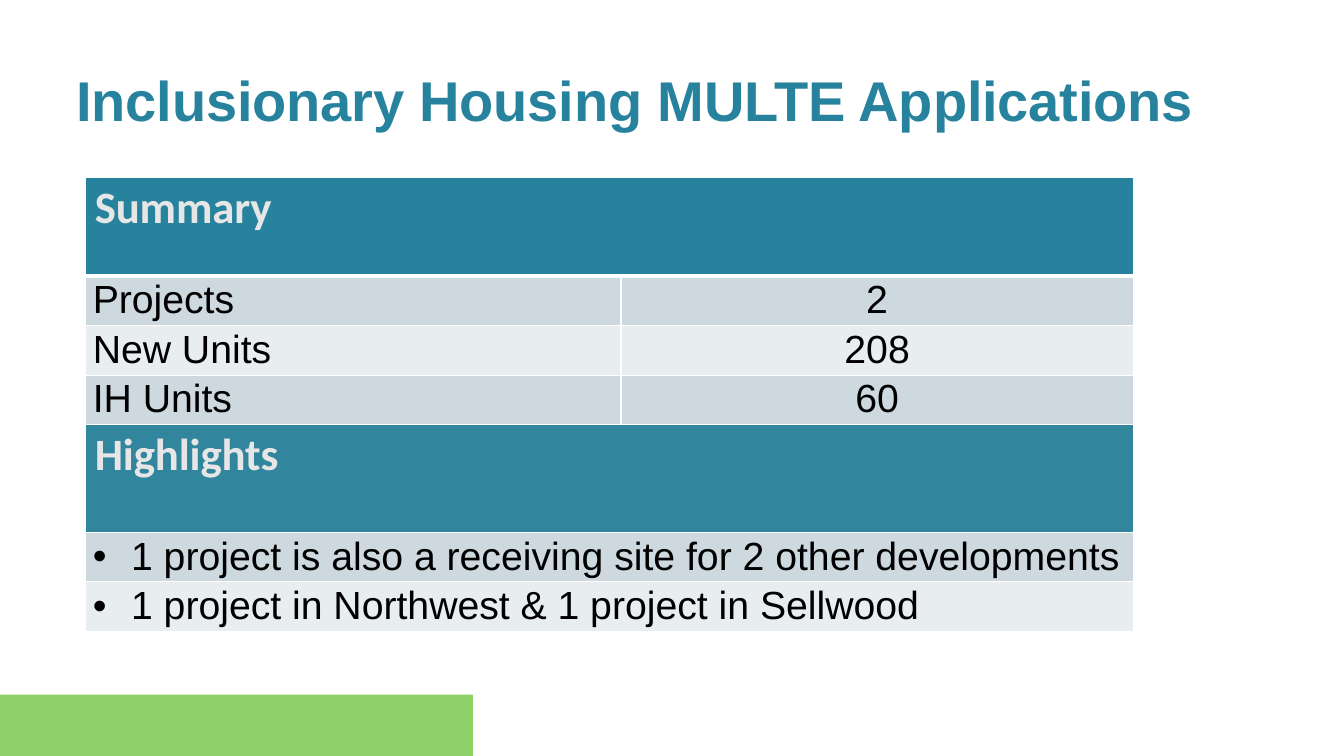
from dataclasses import dataclass

from lxml.etree import SubElement
from pptx import Presentation
from pptx.dml.color import RGBColor
from pptx.enum.shapes import MSO_SHAPE as Preset
from pptx.enum.text import MSO_ANCHOR as Anchor, MSO_AUTO_SIZE as AutoSize, PP_ALIGN as Align
from pptx.oxml.ns import qn
from pptx.util import Emu, Inches, Pt

TEAL = RGBColor(0x27, 0x82, 0x9D)
DEEP_TEAL = RGBColor(0x31, 0x85, 0x9C)
DARK_BAND = RGBColor(0xCD, 0xD8, 0xDF)
LIGHT_BAND = RGBColor(0xE8, 0xED, 0xF0)
PALE_GREY = RGBColor(0xE7, 0xE6, 0xE6)
GREEN = RGBColor(0x8F, 0xD1, 0x69)
WHITE = RGBColor(0xFF, 0xFF, 0xFF)
BLACK = RGBColor(0x00, 0x00, 0x00)

SLIDE_WIDTH, SLIDE_HEIGHT = Inches(13.33), Inches(7.5)


def across(percent: float) -> Emu:
    return Emu(round(SLIDE_WIDTH * percent / 100))


def down(percent: float) -> Emu:
    return Emu(round(SLIDE_HEIGHT * percent / 100))


COLUMNS = (across(39.83), across(38.11))
BODY_HEIGHT = down(6.27)


@dataclass(frozen=True)
class Row:
    label: str
    fill: RGBColor
    value: str = ""
    height: Emu = BODY_HEIGHT
    heading: bool = False
    bulleted: bool = False


ROWS = (
    Row("Summary", TEAL, height=down(13.07), heading=True),
    Row("Projects", DARK_BAND, "2"),
    Row("New Units", LIGHT_BAND, "208"),
    Row("IH Units", DARK_BAND, "60"),
    Row("Highlights", DEEP_TEAL, height=down(14.27), heading=True),
    Row("1 project is also a receiving site for 2 other developments", DARK_BAND, bulleted=True),
    Row("1 project in Northwest & 1 project in Sellwood", LIGHT_BAND, bulleted=True),
)


def set_font(para, name: str, size: float, color: RGBColor, bold: bool) -> None:
    font = para.font
    font.name, font.size, font.bold = name, Pt(size), bold
    font.color.rgb = color


def set_indent(para, left: float, first: float = 0) -> None:
    properties = para._p.get_or_add_pPr()
    properties.set("marL", str(Inches(left)))
    properties.set("indent", str(Inches(first)))


def tighten(para) -> None:
    for span in para.runs:
        span._r.get_or_add_rPr().set("spc", "-10")


def set_borders(cell, top: float, bottom: float) -> None:
    properties = cell._tc.get_or_add_tcPr()
    sides = (("L", 1), ("R", 1), ("T", top), ("B", bottom))
    for index, (side, width) in enumerate(sides):
        line = SubElement(properties, qn(f"a:ln{side}"), w=str(Pt(width)))
        fill = SubElement(line, qn("a:solidFill"))
        SubElement(fill, qn("a:srgbClr"), val=str(WHITE))
        properties.insert(index, line)


def write_cell(cell, text: str, row: Row, align: Align) -> None:
    side = 0 if row.heading else Inches(0.07)
    cell.margin_left = cell.margin_right = side
    cell.margin_top = Inches(0.03) if row.heading else 0
    cell.margin_bottom = 0
    para = cell.text_frame.paragraphs[0]
    para.text, para.alignment = text, align
    if row.heading:
        para.space_before = Pt(2.1)
        set_font(para, "Calibri", 32, PALE_GREY, True)
        set_indent(para, 0.09)
        tighten(para)
        return
    para.line_spacing, para.space_after = 1.05, Pt(8)
    if row.bulleted:
        set_indent(para, 0.38, -0.38)
        properties = para._p.get_or_add_pPr()
        SubElement(properties, qn("a:buFont"), typeface="Arial")
        SubElement(properties, qn("a:buChar"), char="•")
    set_font(para, "Arial", 28, BLACK, False)


def add_corner_band(page) -> None:
    band = page.shapes.add_shape(Preset.RECTANGLE, 0, down(91.87), across(35.18), down(8.13))
    band.shadow.inherit = False
    band.fill.solid()
    band.fill.fore_color.rgb = GREEN
    band.line.fill.background()


def add_summary_table(page) -> None:
    frame = page.shapes.add_table(
        len(ROWS), len(COLUMNS), across(6.38), down(23.47),
        Emu(sum(COLUMNS)), Emu(sum(row.height for row in ROWS)),
    )
    table = frame.table
    for column, width in zip(table.columns, COLUMNS):
        column.width = width
    for index, row in enumerate(ROWS):
        table.rows[index].height = row.height
        label, value = table.cell(index, 0), table.cell(index, 1)
        for cell in (label, value):
            cell.fill.solid()
            cell.fill.fore_color.rgb = row.fill
            # The rule under the first heading is heavier
            set_borders(cell, 3 if index == 1 else 1, 3 if index == 0 else 1)
        write_cell(label, row.label, row, Align.LEFT)
        if row.value:
            write_cell(value, row.value, row, Align.CENTER)
        else:
            label.merge(value)


def fill_title(page) -> None:
    title = page.shapes.title
    title.left, title.top = across(5.63), down(8.53)
    title.width, title.height = across(88.75), down(9.2)
    frame = title.text_frame
    frame.margin_left = frame.margin_right = frame.margin_bottom = 0
    frame.margin_top = Inches(0.01)
    frame.vertical_anchor = Anchor.TOP
    frame.word_wrap = True
    frame.auto_size = AutoSize.SHAPE_TO_FIT_TEXT
    para = frame.paragraphs[0]
    para.text = "Inclusionary Housing MULTE Applications"
    para.alignment, para.space_before = Align.LEFT, Pt(1)
    set_font(para, "Arial", 40, TEAL, True)
    set_indent(para, 0.01)
    tighten(para)


def main() -> None:
    deck = Presentation()
    deck.slide_width, deck.slide_height = SLIDE_WIDTH, SLIDE_HEIGHT
    page = deck.slides.add_slide(deck.slide_layouts[5])
    add_corner_band(page)
    add_summary_table(page)
    fill_title(page)
    deck.save("out.pptx")


if __name__ == "__main__":
    main()
